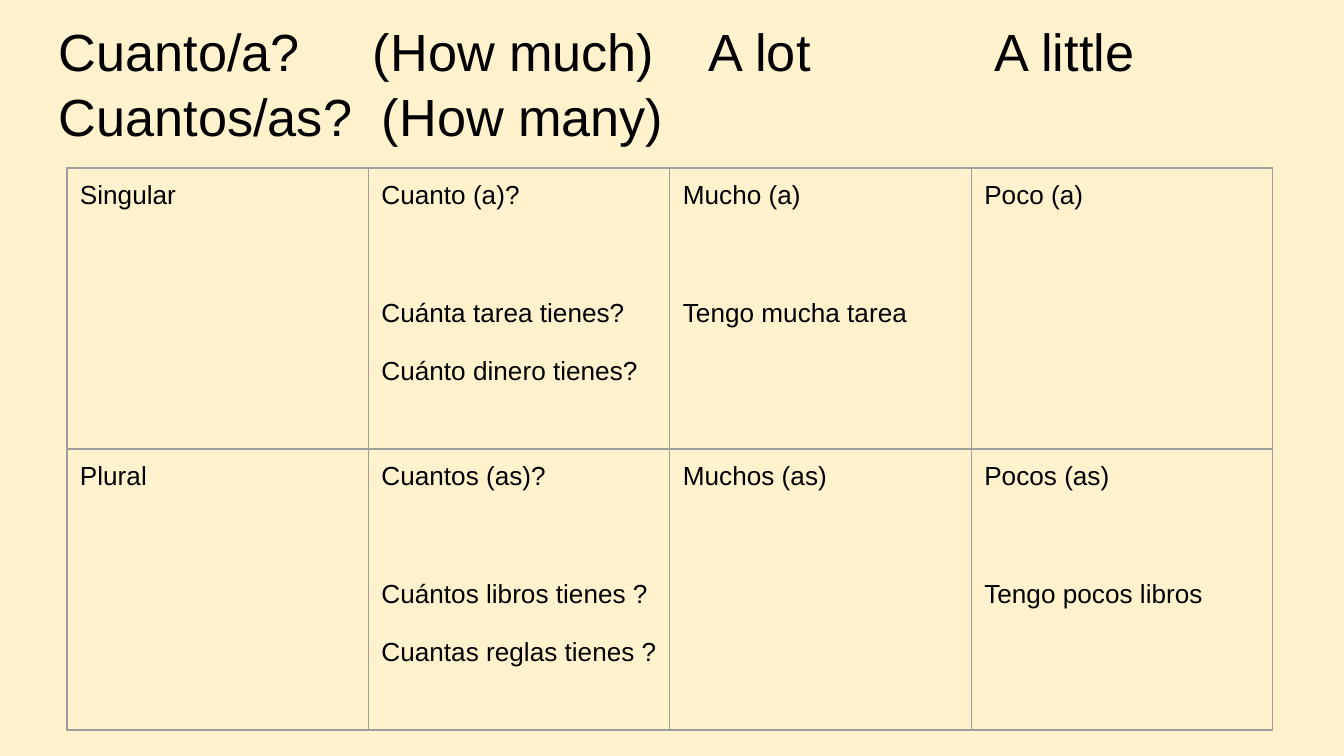
from dataclasses import dataclass

from lxml import etree
from pptx import Presentation
from pptx.dml.color import RGBColor
from pptx.enum.text import MSO_ANCHOR
from pptx.oxml.ns import qn
from pptx.util import Pt

TOP = MSO_ANCHOR.TOP
EMU_PER_PX = 914400 / 134.4
BLANK_LAYOUT = 6


@dataclass(frozen=True)
class Theme:
    font: str = "Arial"
    background: str = "FFF2CC"
    text: str = "000000"
    border: str = "9E9E9E"
    title_size: int = 28
    cell_size: int = 14
    border_width: float = 0.75
    title_spacing: float = 1.04


THEME = Theme()
INSET = 13
TITLE_TOP_INSET = 17
EXAMPLE_GAP = 88
NEXT_EXAMPLE_GAP = 29
TABLE_WIDTH = 1206
ROW_HEIGHT = 281

TITLE_LINES = [
    (["Cuanto/a?", "(How much)", "A lot", "A little"], [314, 650, 936]),
    (["Cuantos/as?", "(How many)"], [323]),
]
QUANTITY_ROWS = [
    [
        ["Singular"],
        ["Cuanto (a)?", "Cuánta tarea tienes?", "Cuánto dinero tienes?"],
        ["Mucho (a)", "Tengo mucha tarea"],
        ["Poco (a)"],
    ],
    [
        ["Plural"],
        ["Cuantos (as)?", "Cuántos libros tienes ?", "Cuantas reglas tienes ?"],
        ["Muchos (as)"],
        ["Pocos (as)", "Tengo pocos libros"],
    ],
]


def px(length):
    return round(length * EMU_PER_PX)


def add_run(paragraph, text, size):
    run = paragraph.add_run()
    run.text = text
    run.font.name = THEME.font
    run.font.size = Pt(size)
    run.font.color.rgb = RGBColor.from_string(THEME.text)


def next_paragraph(frame, index):
    return frame.add_paragraph() if index else frame.paragraphs[0]


def set_margins(target, top=INSET):
    target.margin_left = target.margin_right = target.margin_bottom = px(INSET)
    target.margin_top = px(top)
    target.vertical_anchor = TOP


def add_tab_stops(paragraph, stops):
    tab_list = etree.SubElement(paragraph._p.get_or_add_pPr(), qn("a:tabLst"))
    for stop in stops:
        etree.SubElement(tab_list, qn("a:tab"), pos=str(px(stop)), algn="l")


def add_title(slide):
    shape = slide.shapes.add_textbox(px(46), 0, px(1252), px(168))
    frame = shape.text_frame
    frame.word_wrap = True
    set_margins(frame, TITLE_TOP_INSET)
    for index, (phrases, stops) in enumerate(TITLE_LINES):
        paragraph = next_paragraph(frame, index)
        paragraph.line_spacing = THEME.title_spacing
        add_tab_stops(paragraph, stops)
        add_run(paragraph, "\t".join(phrases), THEME.title_size)


def add_borders(cell):
    properties = cell._tc.get_or_add_tcPr()
    for position, side in enumerate(("a:lnL", "a:lnR", "a:lnT", "a:lnB")):
        line = etree.Element(qn(side), w=str(Pt(THEME.border_width)))
        fill = etree.SubElement(line, qn("a:solidFill"))
        etree.SubElement(fill, qn("a:srgbClr"), val=THEME.border)
        properties.insert(position, line)


def fill_cell(cell, lines):
    set_margins(cell)
    cell.fill.background()
    add_borders(cell)
    for index, text in enumerate(lines):
        paragraph = next_paragraph(cell.text_frame, index)
        if index:
            gap = EXAMPLE_GAP if index == 1 else NEXT_EXAMPLE_GAP
            paragraph.space_before = px(gap)
        add_run(paragraph, text, THEME.cell_size)


def add_quantity_table(slide):
    row_count, column_count = len(QUANTITY_ROWS), len(QUANTITY_ROWS[0])
    table = slide.shapes.add_table(
        row_count, column_count, px(67), px(168),
        px(TABLE_WIDTH), px(ROW_HEIGHT * row_count),
    ).table
    table.first_row = False
    table.horz_banding = False
    for row_index, row in enumerate(QUANTITY_ROWS):
        for column_index, lines in enumerate(row):
            fill_cell(table.cell(row_index, column_index), lines)


def main():
    presentation = Presentation()
    presentation.slide_width = px(1344)
    presentation.slide_height = px(756)
    slide = presentation.slides.add_slide(presentation.slide_layouts[BLANK_LAYOUT])
    slide.background.fill.solid()
    slide.background.fill.fore_color.rgb = RGBColor.from_string(THEME.background)
    add_title(slide)
    add_quantity_table(slide)
    presentation.save("out.pptx")


if __name__ == "__main__":
    main()
